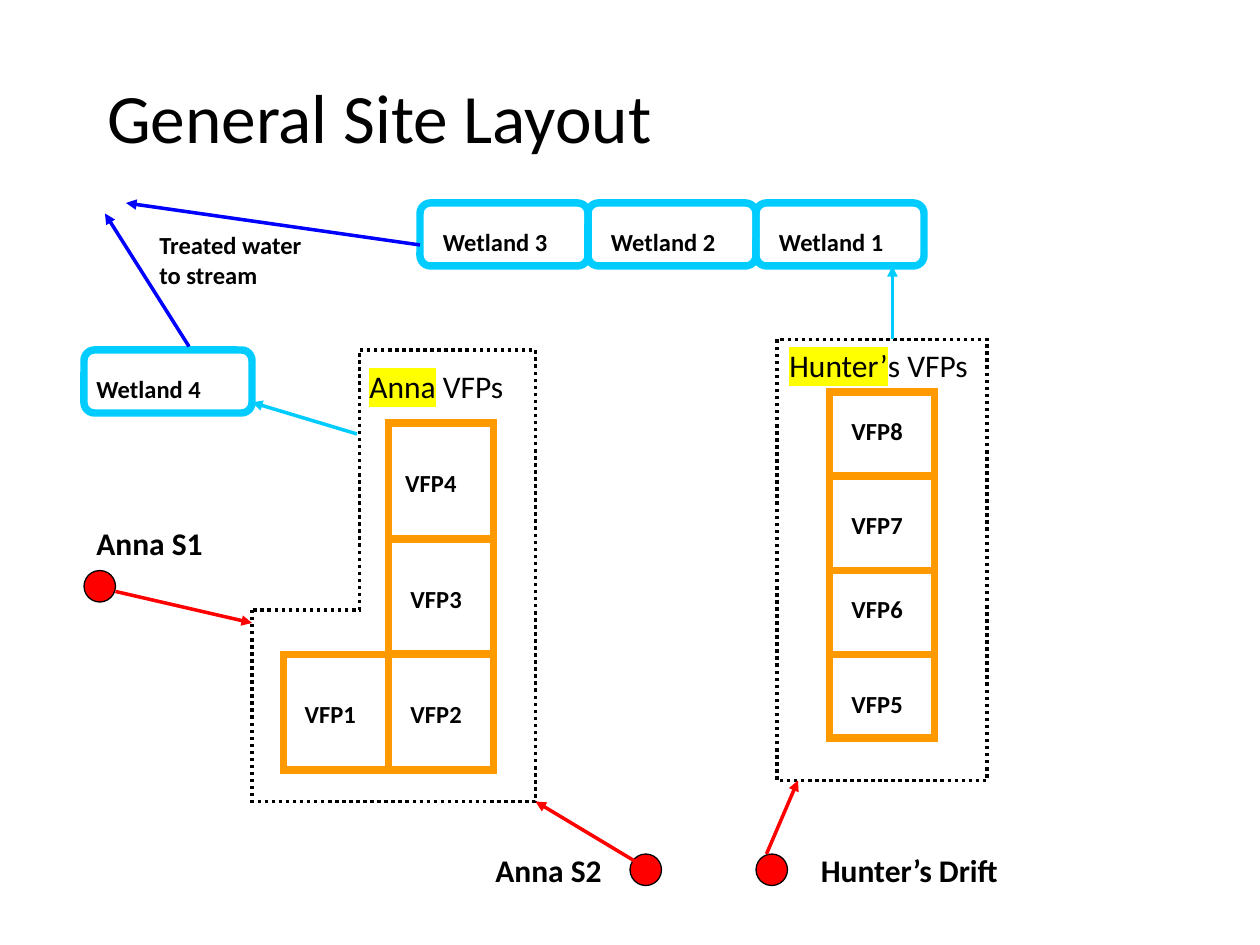
from lxml import etree
from pptx import Presentation
from pptx.dml.color import RGBColor
from pptx.enum import dml, shapes, text
from pptx.oxml import ns
from pptx.util import Pt

FONT = "Calibri"
BLACK, RED, ORANGE = "000000", "FF0000", "FF9900"
CYAN, BLUE, YELLOW = "00CCFF", "0000FF", "FFFF00"
SHAPE = shapes.MSO_SHAPE


def rgb(color):
    return RGBColor.from_string(color)


def style_font(p, size, bold=False):
    p.font.name, p.font.size, p.font.bold = FONT, Pt(size), bold
    p.font.color.rgb = rgb(BLACK)


def outline(sp, color, width, dotted=False):
    sp.shadow.inherit = False
    sp.fill.background()
    sp.line.color.rgb = rgb(color)
    sp.line.width = Pt(width)
    if dotted:
        sp.line.dash_style = dml.MSO_LINE.ROUND_DOT
    ln = sp.line._get_or_add_ln()
    etree.SubElement(ln, ns.qn("a:miter"), lim="800000")


def add_title(s, wording):
    title = s.shapes.title
    title.left, title.top, title.width, title.height = Pt(54), Pt(42), Pt(612), Pt(54)
    tf = title.text_frame
    tf.text = wording
    tf.auto_size = text.MSO_AUTO_SIZE.NONE
    tf.vertical_anchor = text.MSO_ANCHOR.MIDDLE
    p = tf.paragraphs[0]
    p.alignment = text.PP_ALIGN.LEFT
    p.line_spacing = 0.9
    style_font(p, 39.6)


def add_label(s, wording, x, y, w, h, size=14, bold=True, marked="", wrap=False):
    """Add a text box; the marked words come first, on a yellow highlight."""
    tf = s.shapes.add_textbox(Pt(x), Pt(y), Pt(w), Pt(h)).text_frame
    tf.word_wrap = wrap
    tf.auto_size = text.MSO_AUTO_SIZE.SHAPE_TO_FIT_TEXT
    p = tf.paragraphs[0]
    if marked:
        r = p.add_run()
        r.text = marked
        highlight = etree.SubElement(r._r.get_or_add_rPr(), ns.qn("a:highlight"))
        etree.SubElement(highlight, ns.qn("a:srgbClr"), val=YELLOW)
    p.add_run().text = wording
    style_font(p, size, bold)
    return p


def add_box(s, x, y, w, h, color, width, kind=SHAPE.RECTANGLE, dotted=False):
    sp = s.shapes.add_shape(kind, Pt(x), Pt(y), Pt(w), Pt(h))
    outline(sp, color, width, dotted)
    return sp


def add_wetland(s, number, x, y, dx=6):
    add_box(s, x, y, 96, 36, CYAN, 4.25, SHAPE.ROUNDED_RECTANGLE)
    add_label(s, f"Wetland {number}", x + dx, y + 10, 76.3, 24)


def add_vfp(s, number, x, y, h, dx, dy):
    add_box(s, x, y, 60, h, ORANGE, 4.5)
    p = add_label(s, f"VFP{number}", x + dx, y + dy, 44, 24.2)
    p.alignment = text.PP_ALIGN.RIGHT


def add_source(s, name, x, y, label_x, label_y, label_w):
    sp = add_box(s, x, y, 18, 18, BLACK, 0.75, SHAPE.OVAL)
    sp.fill.solid()
    sp.fill.fore_color.rgb = rgb(RED)
    add_label(s, name, label_x, label_y, label_w, 29, size=18)


def add_arrow(s, x1, y1, x2, y2, color):
    cx = s.shapes.add_connector(shapes.MSO_CONNECTOR.STRAIGHT,
                                Pt(x1), Pt(y1), Pt(x2), Pt(y2))
    cx.line.color.rgb = rgb(color)
    cx.line.width = Pt(2)
    etree.SubElement(cx.line._get_or_add_ln(), ns.qn("a:tailEnd"), type="triangle")
    etree.SubElement(cx._element.spPr, ns.qn("a:effectLst"))


def add_dotted_area(s, points):
    start, *rest = [(Pt(x), Pt(y)) for x, y in points]
    builder = s.shapes.build_freeform(*start)
    builder.add_line_segments(rest, close=True)
    outline(builder.convert_to_shape(), BLACK, 2, dotted=True)


def add_anna_area(s):
    for number, x, y, dx in ((4, 222, 242, 2), (3, 222, 308, 5),
                             (2, 222, 374, 5), (1, 162, 374, 4.5)):
        add_vfp(s, number, x, y, 66, dx, 22)
    add_dotted_area(s, [(144, 348.5), (144, 458), (306, 458),
                        (306, 200), (205.5, 200), (205.5, 348.5)])
    add_label(s, " VFPs", 204, 206, 92, 29, 18, False, marked="Anna")


def add_hunter_area(s):
    y = 224
    for number, h, dy in ((8, 48, 10), (7, 54, 16), (6, 48, 10), (5, 48, 16)):
        add_vfp(s, number, 474, y, h, 5, dy)
        y += h
    add_box(s, 444, 194, 120, 252, BLACK, 2, dotted=True)
    add_label(s, "s VFPs", 444, 194, 116.6, 29, 18, False, marked="Hunter’")


def main():
    prs = Presentation()
    prs.slide_width, prs.slide_height = Pt(720), Pt(540)
    s = prs.slides.add_slide(prs.slide_layouts[5])
    add_title(s, "General Site Layout")

    add_source(s, "Anna S1", 48, 326, 48, 296, 80)
    add_source(s, "Anna S2", 360, 488, 276, 482.5, 80)
    add_source(s, "Hunter’s Drift", 432, 488, 462, 482.5, 126)
    add_anna_area(s)
    add_hunter_area(s)
    for i in range(3):
        add_wetland(s, i + 1, 432 - 96 * i, 116)
    add_wetland(s, 4, 48, 200, dx=0)
    add_label(s, "Treated water to stream", 84, 128, 102, 41, wrap=True)

    for arrow in ((66, 338, 144, 356, RED),
                  (366, 494, 306, 458, RED),
                  (438, 488, 456, 446, RED),
                  (510, 194, 510, 152, CYAN),
                  (204, 248, 144, 230, CYAN),
                  (240, 140, 72, 116, BLUE),
                  (108, 198, 60, 122, BLUE)):
        add_arrow(s, *arrow)
    prs.save("out.pptx")


if __name__ == "__main__":
    main()
